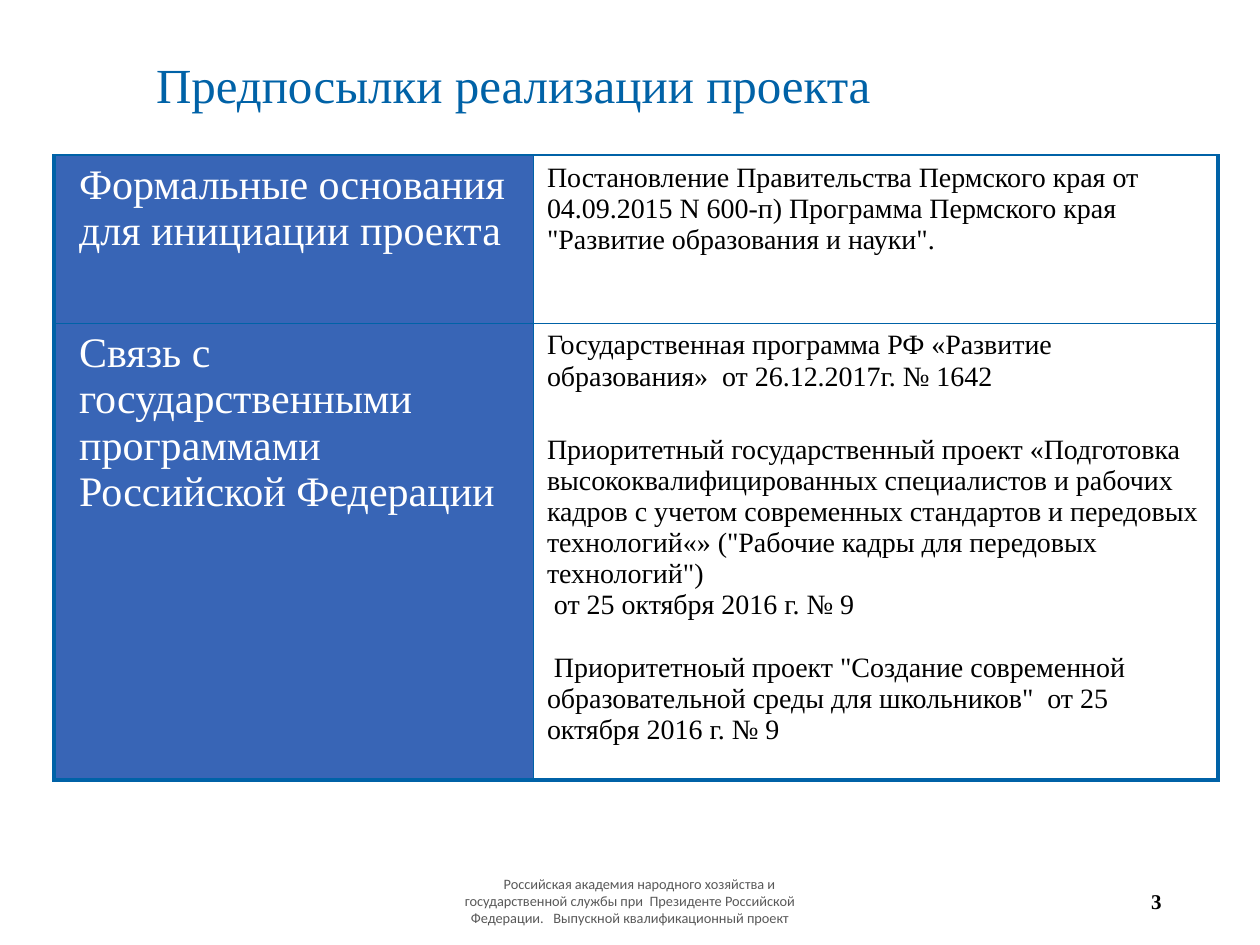
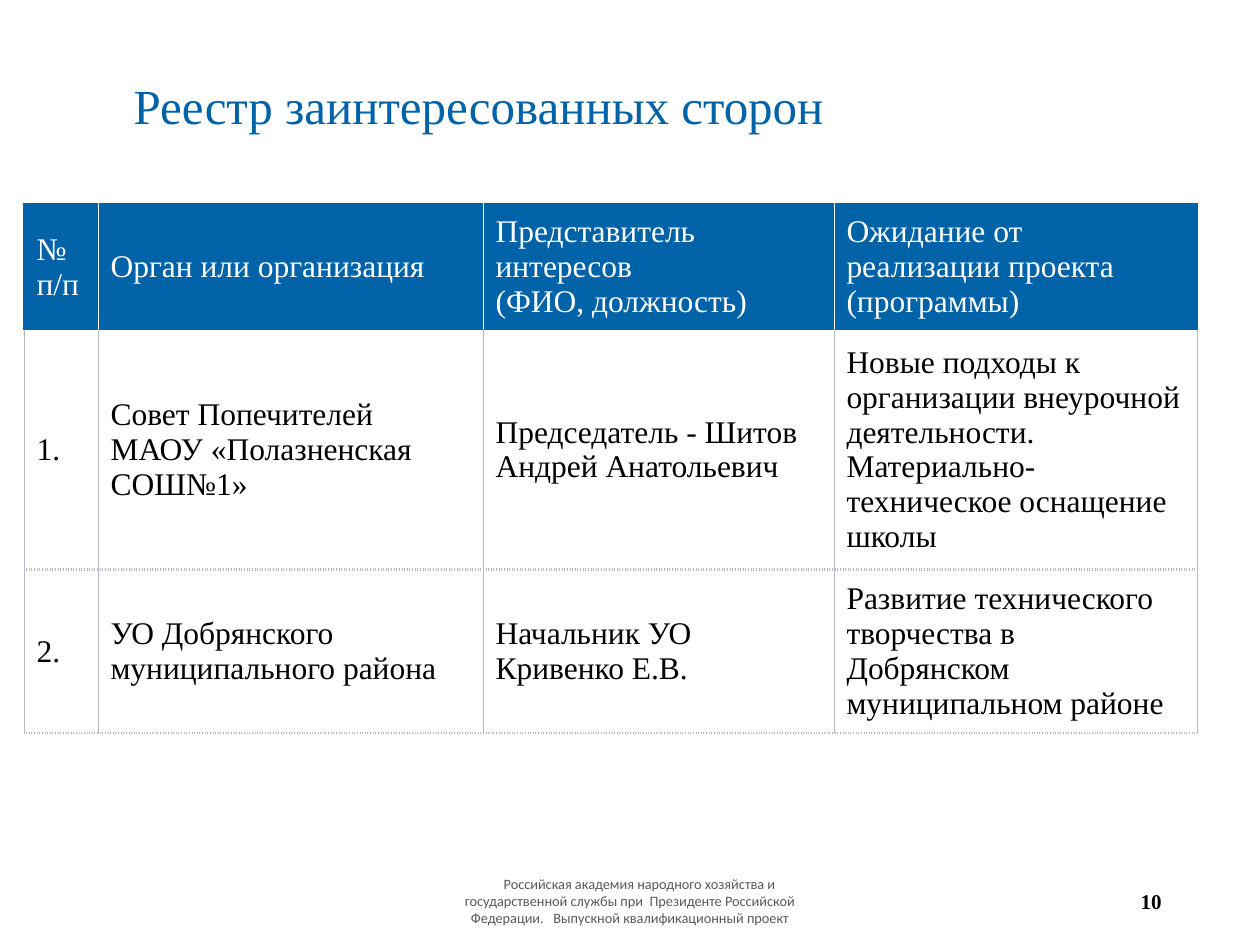
import pptx
import pptx.util
import pptx.dml.color
import pptx.enum.text
import pptx.oxml.ns
from lxml import etree

EMU = 914400 / 126
HUES = {"blue": "0062A7", "label": "3865B6", "rule": "B0B9CB",
        "white": "FFFFFF", "black": "000000", "grey": "595959"}
SERIF = "Times New Roman"
ALIGN = pptx.enum.text.PP_ALIGN
ANCHOR = pptx.enum.text.MSO_ANCHOR
FOOTER = ("Российская академия народного хозяйства и государственной службы при  "
          "Президенте Российской Федерации.   Выпускной квалификационный проект")

GROUNDS = [
    ("Формальные основания для инициации проекта",
     ["Постановление Правительства Пермского края от 04.09.2015 N 600-п) "
      "Программа Пермского края \"Развитие образования и науки\"."]),
    ("Связь с государственными программами Российской Федерации",
     ["Государственная программа РФ «Развитие образования»  от 26.12.2017г. № 1642",
      "Приоритетный государственный проект «Подготовка высококвалифицированных "
      "специалистов и рабочих кадров с учетом современных стандартов и передовых "
      "технологий«» (\"Рабочие кадры для передовых технологий\")",
      " от 25 октября 2016 г. № 9",
      " Приоритетноый проект \"Создание современной образовательной среды для "
      "школьников\"  от 25 октября 2016 г. № 9"]),
]
PARTIES = [
    (["№", "п/п"], "Орган или организация",
     "Представитель интересов\v(ФИО, должность)",
     "Ожидание от реализации проекта (программы)"),
    ("1.", "Совет Попечителей МАОУ «Полазненская СОШ№1»",
     "Председатель - Шитов Андрей Анатольевич",
     "Новые подходы к организации внеурочной деятельности. "
     "Материально-техническое оснащение школы"),
    ("2.", "УО Добрянского муниципального района",
     "Начальник УО Кривенко Е.В.",
     "Развитие технического творчества в Добрянском муниципальном районе"),
]


def px(n):
    return pptx.util.Emu(round(n * EMU))


def rgb(hue):
    return pptx.dml.color.RGBColor.from_string(HUES[hue])


def write(frame, lines, size=18, hue="black", font=SERIF, bold=False,
          align=ALIGN.LEFT, gaps=None, lead=None, left=0, first=0):
    """Fill a text frame; gaps maps a paragraph's index to its space before in points."""
    lines = [lines] if isinstance(lines, str) else lines
    frame.word_wrap = True
    for i, line in enumerate(lines):
        para = frame.paragraphs[0] if i == 0 else frame.add_paragraph()
        para.text = line
        para.alignment = align
        para.space_before = pptx.util.Pt((gaps or {}).get(i, 0))
        if lead:
            para.line_spacing = lead
        props = para._p.get_or_add_pPr()
        props.set("marL", str(px(left)))
        props.set("indent", str(px(first)))
        for run in para.runs:
            run.font.size = pptx.util.Pt(size)
            run.font.name = font
            run.font.bold = bold
            run.font.color.rgb = rgb(hue)


def label(slide, box, lines, **style):
    frame = slide.shapes.add_textbox(*map(px, box)).text_frame
    frame.vertical_anchor = ANCHOR.MIDDLE
    write(frame, lines, **style)


def page(deck, title, box, number):
    """Add a slide with its title, footer and page number."""
    slide = deck.slides.add_slide(deck.slide_layouts[5])
    head = slide.shapes.title
    head.left, head.top, head.width, head.height = map(px, box)
    head.text_frame.auto_size = pptx.enum.text.MSO_AUTO_SIZE.NONE
    head.text_frame.vertical_anchor = ANCHOR.BOTTOM
    write(head.text_frame, title, size=28, hue="blue", lead=0.9)
    label(slide, (432, 876, 396, 50), FOOTER, size=8.2, hue="grey",
          font="Calibri", align=ALIGN.CENTER, first=19)
    label(slide, (891, 876, 283, 50), number, size=12, bold=True, align=ALIGN.RIGHT)
    return slide


def grid(slide, left, top, cols, rows):
    """Add a plain table whose rows grow to fit their text."""
    shape = slide.shapes.add_table(len(rows), len(cols), px(left), px(top),
                                   px(sum(cols)), px(sum(rows)))
    table = shape.table
    table.first_row = table.horz_banding = False
    for col, width in zip(table.columns, cols):
        col.width = px(width)
    for row, height in zip(table.rows, rows):
        row.height = px(height)
    return table


def edge(cell, **sides):
    """Draw the sides L, R, T, B, each given as (hue, points[, dash])."""
    props = cell._tc.get_or_add_tcPr()
    for i, side in enumerate("LRTB"):
        line = etree.Element(pptx.oxml.ns.qn("a:ln" + side))
        props.insert(i, line)
        if side not in sides:
            etree.SubElement(line, pptx.oxml.ns.qn("a:noFill"))
            continue
        hue, width, *dash = sides[side]
        line.set("w", str(pptx.util.Pt(width)))
        fill = etree.SubElement(line, pptx.oxml.ns.qn("a:solidFill"))
        etree.SubElement(fill, pptx.oxml.ns.qn("a:srgbClr")).set("val", HUES[hue])
        if dash:
            etree.SubElement(line, pptx.oxml.ns.qn("a:prstDash")).set("val", dash[0])


def paint(cell, hue):
    cell.fill.solid()
    cell.fill.fore_color.rgb = rgb(hue)


def grounds(deck):
    slide = page(deck, "Предпосылки реализации проекта", (107, 52, 960, 68), "3")
    slide.shapes.title.text_frame.margin_left = px(49)
    table = grid(slide, 54, 155, (479, 685), (168, 338))
    hair, thin, thick = ("blue", 0.5), ("blue", 1), ("blue", 2.25)
    for r, (name, basis) in enumerate(GROUNDS):
        head, body = table.cell(r, 0), table.cell(r, 1)
        for cell in (head, body):
            cell.margin_left = cell.margin_right = px(14)
            cell.margin_top = cell.margin_bottom = px(7)
        paint(head, "label")
        paint(body, "white")
        write(head.text_frame, name, size=24, hue="white", left=11)
        write(body.text_frame, basis, size=16, gaps={1: 24, 3: 18})
        roof, base = (hair, thick) if r else (thin, hair)
        edge(head, L=thick, R=hair, T=roof, B=base)
        edge(body, L=hair, R=thick, T=roof, B=base)


def parties(deck):
    slide = page(deck, "Реестр заинтересованных сторон", (121, 14, 935, 127), "10")
    table = grid(slide, 24, 204, (74, 385, 351, 363), (74, 73, 73))
    rule, dots = ("rule", 0.5), ("rule", 1.5, "sysDot")
    blue, white = ("blue", 1), ("white", 0.5)
    last = len(PARTIES[0]) - 1
    for r, row in enumerate(PARTIES):
        for c, words in enumerate(row):
            cell = table.cell(r, c)
            cell.vertical_anchor = ANCHOR.MIDDLE
            paint(cell, "white" if r else "blue")
            write(cell.text_frame, words, hue="black" if r else "white")
            if r == 0:
                edge(cell, L=white if c else blue, T=blue,
                     R=blue if c == last else white)
            elif r == 1:
                edge(cell, L=rule, R=rule, B=dots)
            else:
                edge(cell, L=rule, R=rule, T=dots, B=dots)


def main():
    deck = pptx.Presentation()
    deck.slide_width, deck.slide_height = px(1260), px(945)
    grounds(deck)
    parties(deck)
    deck.save("out.pptx")


if __name__ == "__main__":
    main()
